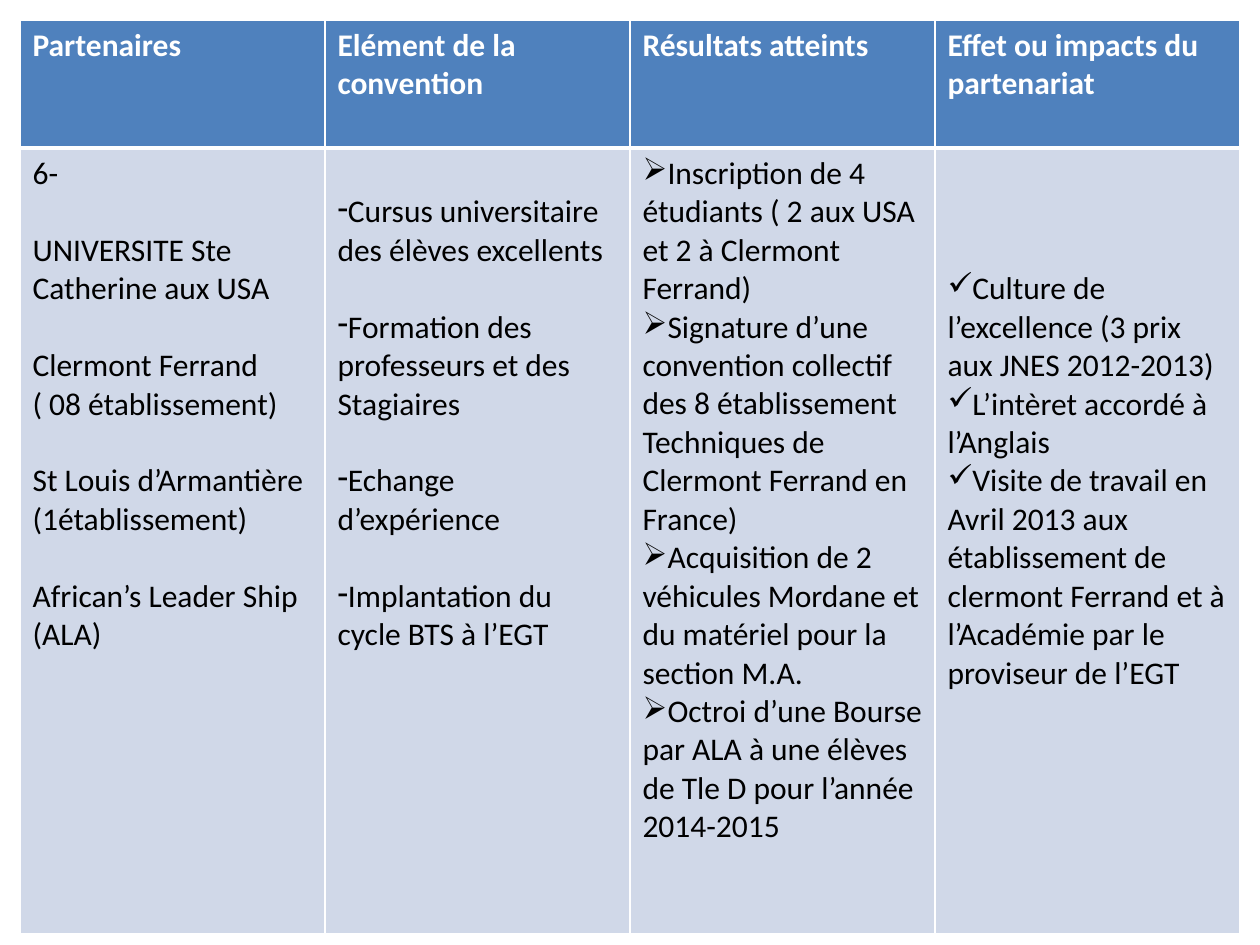
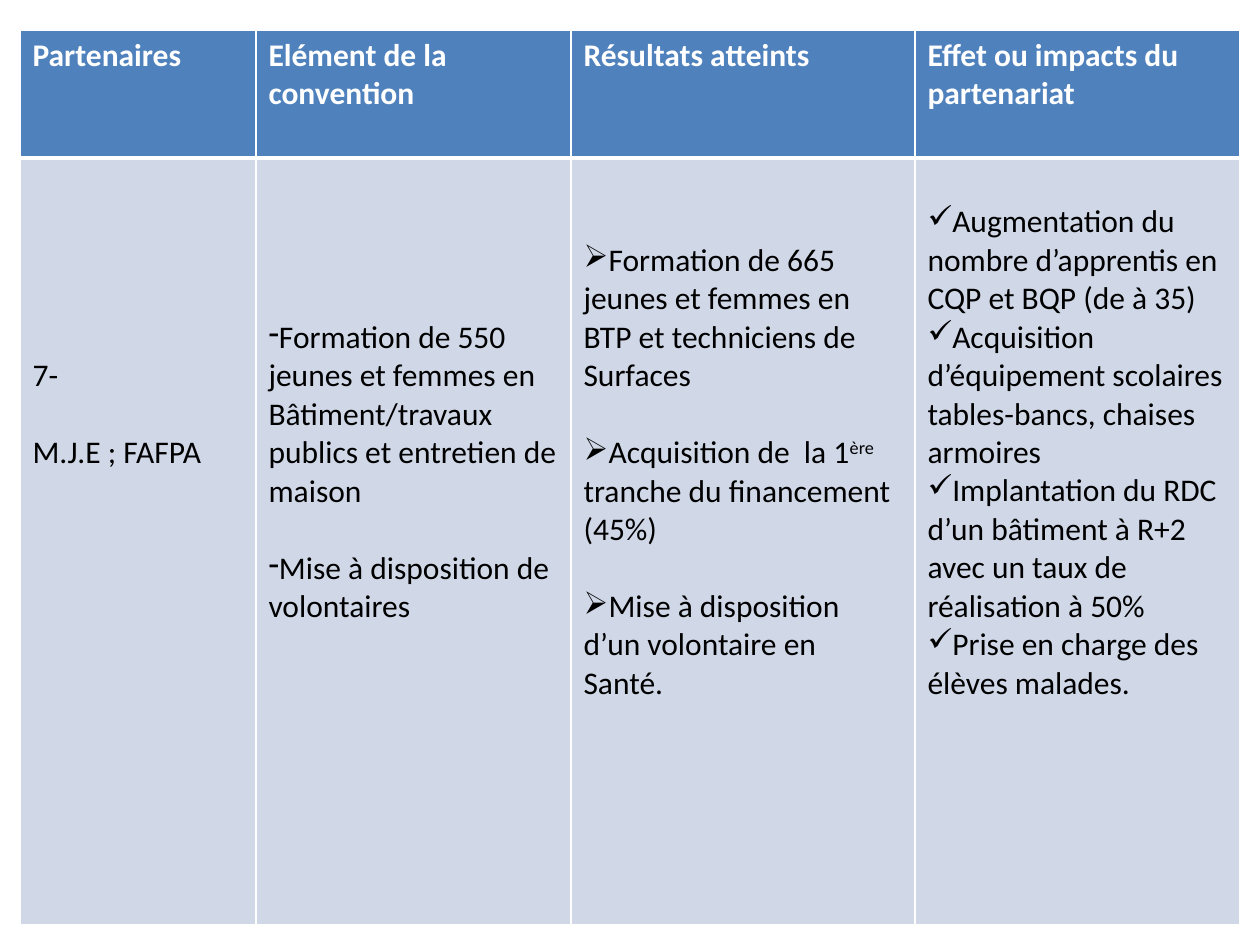
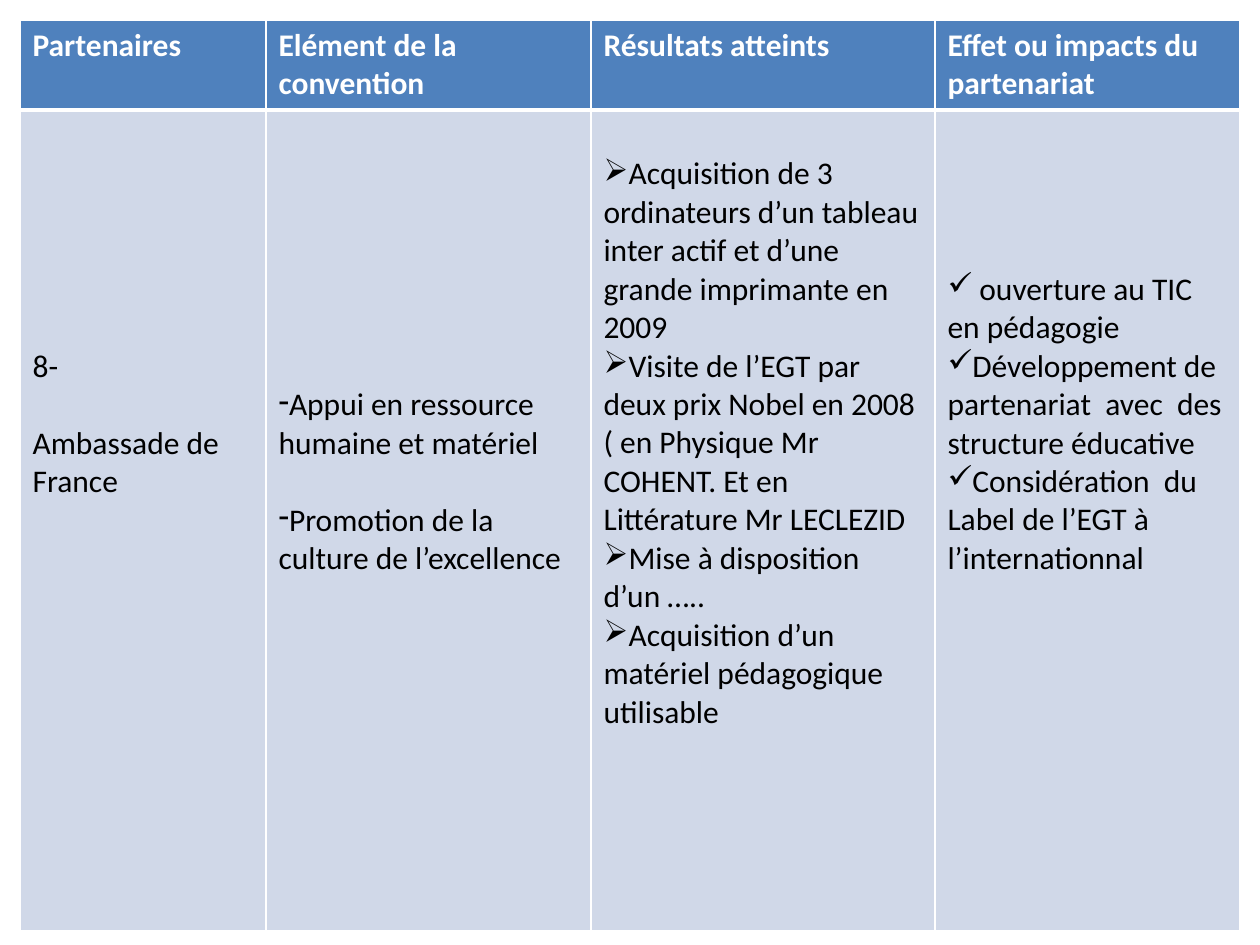
from lxml.etree import SubElement
from pptx import Presentation
from pptx.dml.color import RGBColor
from pptx.oxml.ns import qn
from pptx.util import Emu, Pt

SCALE = 914400 / 126  # EMU in one px
LINE = 22             # height of a text line, pt
INK = {"head": "4F81BD", "body": "D0D8E8", "white": "FFFFFF", "black": "000000"}
HEADS = ["Partenaires", "Elément de la convention", "Résultats atteints",
         "Effet ou impacts du partenariat"]
DASH, ARROW, CHECK = "-", "➢", "✓"


def px(n):
    return Emu(round(n * SCALE))


def write(para, text, size=18, color="black", bold=False, bullet=None, gap=0):
    """Fill a paragraph; text between ^ signs is raised."""
    para.space_before = Pt(gap * LINE)
    if bullet:
        props = para._p.get_or_add_pPr()
        props.set("marL", "0")
        props.set("indent", "0")
        SubElement(props, qn("a:buChar"), char=bullet)
    for i, part in enumerate(text.split("^")):
        run = para.add_run()
        run.text = part
        font = run.font
        font.name, font.size, font.bold = "Calibri", Pt(size), bold
        font.color.rgb = RGBColor.from_string(INK[color])
        if i % 2:
            run._r.get_or_add_rPr().set("baseline", "30000")


class Deck:
    def __init__(self):
        self.prs = Presentation()
        self.prs.slide_width, self.prs.slide_height = px(1260), px(945)
        self.slide = None

    def page(self):
        self.slide = self.prs.slides.add_slide(self.prs.slide_layouts[6])

    def edge(self, cell, **widths):
        """White cell borders, widths in points."""
        props = cell._tc.get_or_add_tcPr()
        for side in "LRTB":
            line = SubElement(props, qn("a:ln" + side), w=str(Pt(widths.get(side, 1))))
            fill = SubElement(line, qn("a:solidFill"))
            SubElement(fill, qn("a:srgbClr"), val=INK["white"])

    def cell(self, cell, fill, items, lead=0, **style):
        """Write items from the top, after a number of lead lines."""
        cell.fill.solid()
        cell.fill.fore_color.rgb = RGBColor.from_string(INK[fill])
        cell.margin_top = Pt(3.6 + lead * LINE)
        gap = style.pop("gap", 0)
        frame = cell.text_frame
        for i, item in enumerate(items):
            para = frame.add_paragraph() if i else frame.paragraphs[0]
            write(para, item, gap=gap if i else 0, **style)

    def grid(self, top, cols, rows, body):
        frame = self.slide.shapes.add_table(
            2, len(cols), px(20), px(top), px(sum(cols)), px(sum(rows)))
        table = frame.table
        table.horz_banding = False
        for col, width in zip(table.columns, cols):
            col.width = px(width)
        for row, height in zip(table.rows, rows):
            row.height = px(height)
        for i, (head, (lead, bullet, gap, items)) in enumerate(zip(HEADS, body)):
            upper, lower = table.cell(0, i), table.cell(1, i)
            self.edge(upper, B=3)
            self.edge(lower, T=3)
            self.cell(upper, "head", [head], color="white", bold=True)
            self.cell(lower, "body", items, lead=lead, bullet=bullet, gap=gap)


# Each body cell: lead lines, bullet, lines between items, items
PAGES = [
    dict(top=20, cols=[305] * 4, rows=[128, 786], body=[
        (0, None, 1, [
            "6-",
            "UNIVERSITE Ste Catherine aux USA",
            "Clermont Ferrand ( 08 établissement)",
            "St Louis d’Armantière (1établissement)",
            "African’s Leader Ship (ALA)"]),
        (1, DASH, 1, [
            "Cursus universitaire des élèves excellents",
            "Formation des professeurs et des Stagiaires",
            "Echange d’expérience",
            "Implantation du cycle BTS à l’EGT"]),
        (0, ARROW, 0, [
            "Inscription de 4 étudiants ( 2 aux USA et 2 à Clermont Ferrand)",
            "Signature d’une convention collectif des 8 établissement "
            "Techniques de Clermont Ferrand en France)",
            "Acquisition de 2 véhicules Mordane et du matériel pour la section M.A.",
            "Octroi d’une Bourse par ALA à une élèves de Tle D "
            "pour l’année 2014-2015"]),
        (3, CHECK, 0, [
            "Culture de l’excellence (3 prix aux JNES 2012-2013)",
            "L’intèret accordé à l’Anglais",
            "Visite de travail en Avril 2013 aux établissement de clermont "
            "Ferrand et à l’Académie par le proviseur de l’EGT"]),
    ]),
    dict(top=30, cols=[236, 315, 344, 325], rows=[128, 767], body=[
        (5, None, 1, ["7-", "M.J.E ; FAFPA"]),
        (4, DASH, 1, [
            "Formation de 550 jeunes et femmes en Bâtiment/travaux publics "
            "et entretien de maison",
            "Mise à disposition de volontaires"]),
        (2, ARROW, 1, [
            "Formation de 665 jeunes et femmes en BTP et techniciens de Surfaces",
            "Acquisition de  la 1^ère^ tranche du financement (45%)",
            "Mise à disposition d’un volontaire en Santé."]),
        (1, CHECK, 0, [
            "Augmentation du nombre d’apprentis en CQP et BQP (de à 35)",
            "Acquisition d’équipement scolaires tables-bancs, chaises armoires",
            "Implantation du RDC  d’un bâtiment à R+2  avec un taux de "
            "réalisation à 50%",
            "Prise en charge des élèves malades."]),
    ]),
    dict(top=20, cols=[246, 325, 344, 305], rows=[90, 821], body=[
        (6, None, 1, ["8-", "Ambassade de France"]),
        (7, DASH, 1, [
            "Appui en ressource humaine et matériel",
            "Promotion de la culture de l’excellence"]),
        (1, ARROW, 0, [
            "Acquisition de 3 ordinateurs d’un tableau inter actif et d’une "
            "grande imprimante en 2009",
            "Visite de l’EGT par deux prix Nobel en 2008 ( en Physique Mr "
            "COHENT. Et en Littérature Mr LECLEZID",
            "Mise à disposition d’un …..",
            "Acquisition d’un matériel pédagogique utilisable"]),
        (4, CHECK, 0, [
            " ouverture au TIC en pédagogie",
            "Développement de partenariat  avec  des structure éducative",
            "Considération  du Label de l’EGT à l’internationnal"]),
    ]),
]


def main():
    deck = Deck()
    for page in PAGES:
        deck.page()
        deck.grid(**page)
    deck.prs.save("out.pptx")


if __name__ == "__main__":
    main()
